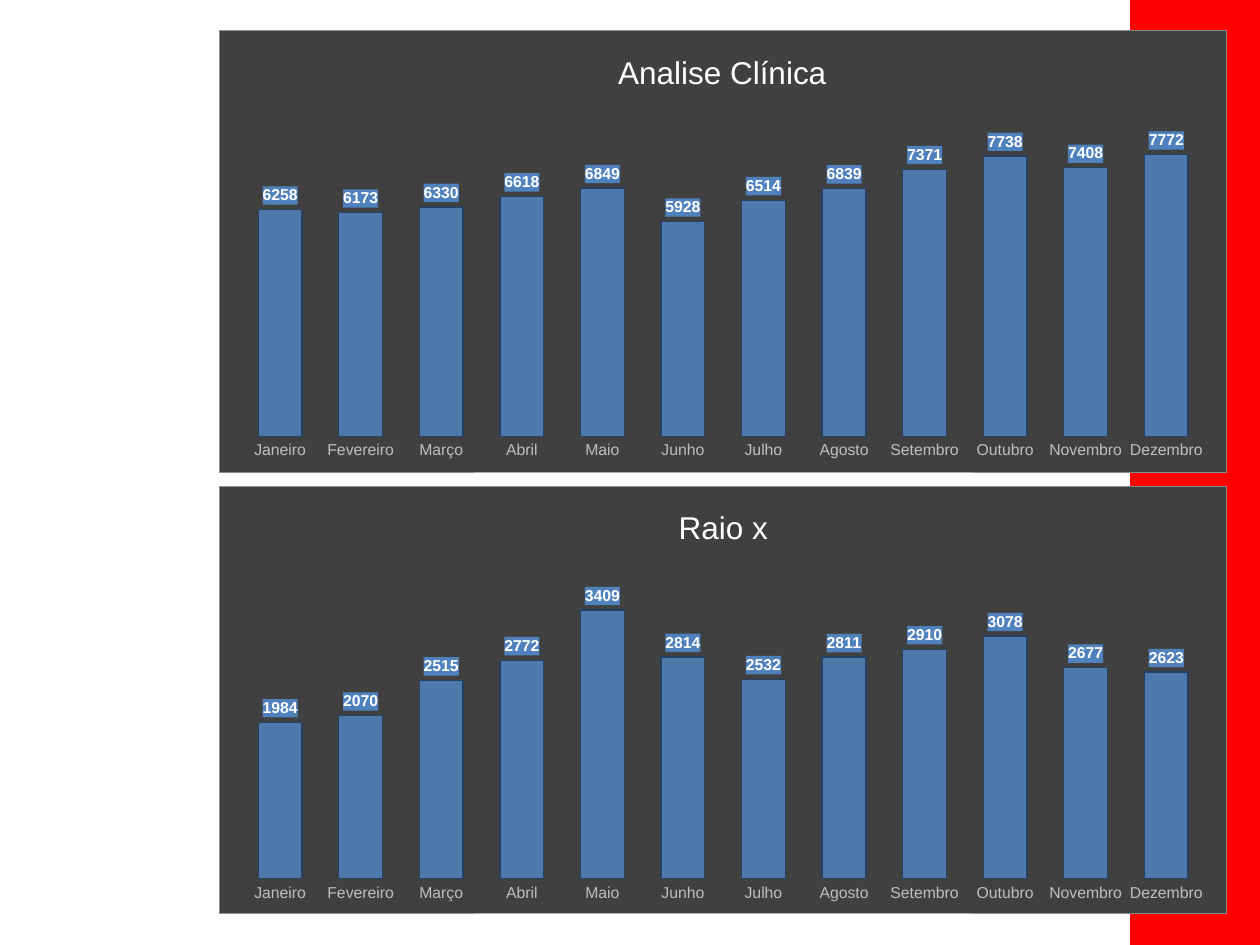
"""Build a slide with two monthly column charts beside a red band."""
from dataclasses import dataclass

from lxml import etree
from pptx import Presentation
from pptx import util as u
from pptx.chart.data import CategoryChartData
from pptx.dml.color import RGBColor
from pptx.enum import chart as charts, shapes
from pptx.oxml import parse_xml
from pptx.oxml.ns import nsdecls, qn


@dataclass(frozen=True)
class Theme:
    font: str = "Arial"
    band: str = "FF0000"
    panel: str = "404040"
    border: str = "8C8C8C"
    column: str = "4F81BD"
    outline: str = "254061"
    months: str = "BFBFBF"
    light: str = "FFFFFF"
    base_size: int = 10
    title_size: int = 18
    small_size: int = 9
    column_alpha: int = 88


THEME = Theme()
WIDTH, HEIGHT = u.Inches(10), u.Inches(7.5)
MONTHS = ("Janeiro", "Fevereiro", "Março", "Abril", "Maio", "Junho", "Julho",
          "Agosto", "Setembro", "Outubro", "Novembro", "Dezembro")
CLINICAL = (6258, 6173, 6330, 6618, 6849, 5928, 6514, 6839, 7371, 7738, 7408, 7772)
XRAY = (1984, 2070, 2515, 2772, 3409, 2814, 2532, 2811, 2910, 3078, 2677, 2623)


def style_font(font, size, color, bold=False):
    """Apply the theme face with a size and colour."""
    font.name, font.size, font.bold = THEME.font, u.Pt(size), bold
    font.color.rgb = RGBColor.from_string(color)


def box_properties(fill, border=None):
    """Return chart shape properties with a fill and an optional border."""
    line = (f'<a:ln w="{u.Pt(0.5)}"><a:solidFill><a:srgbClr val="{border}"/>'
            '</a:solidFill></a:ln>') if border else ""
    return parse_xml(f'<c:spPr {nsdecls("c", "a")}><a:solidFill>'
                     f'<a:srgbClr val="{fill}"/></a:solidFill>{line}</c:spPr>')


def set_layout(parent, index, target=None, **shares):
    """Place a chart part at shares of the chart's size."""
    for old in parent.findall(qn("c:layout")):
        parent.remove(old)
    layout = etree.Element(qn("c:layout"))
    manual = etree.SubElement(layout, qn("c:manualLayout"))
    settings = {"layoutTarget": target} if target else {}
    settings.update(xMode="edge", yMode="edge", **shares)
    for name, value in settings.items():
        etree.SubElement(manual, qn(f"c:{name}")).set("val", str(value))
    parent.insert(index, layout)


def add_band(page):
    """Add the red band on the right edge."""
    band = page.shapes.add_shape(shapes.MSO_SHAPE.RECTANGLE, u.Inches(8.98), 0,
                                 u.Inches(1.25), HEIGHT)
    band.shadow.inherit = False
    band.fill.solid()
    band.fill.fore_color.rgb = RGBColor.from_string(THEME.band)
    band.line.color.rgb = RGBColor.from_string(THEME.band)
    band.line.width = u.Pt(2)


def style_title(chart, title, left):
    """Write the chart title and place it."""
    chart.has_title = True
    para = chart.chart_title.text_frame.paragraphs[0]
    para.text = title
    style_font(para.font, THEME.title_size, THEME.light)
    set_layout(chart.chart_title._element, 1, x=left, y=0.035)


def style_axes(chart, top):
    """Show month names only and fix the value range."""
    months, values = chart.category_axis, chart.value_axis
    months.major_tick_mark = months.minor_tick_mark = charts.XL_TICK_MARK.NONE
    months.format.line.fill.background()
    style_font(months.tick_labels.font, THEME.small_size, THEME.months)
    values.minimum_scale, values.maximum_scale = 0, top
    values.has_major_gridlines = False
    values.visible = False


def style_columns(plot):
    """Colour the columns and their value labels."""
    plot.gap_width = 84
    plot.vary_by_categories = False
    series = plot.series[0]
    look = series.format
    look.fill.solid()
    look.fill.fore_color.rgb = RGBColor.from_string(THEME.column)
    color = series._element.find(".//" + qn("a:srgbClr"))
    etree.SubElement(color, qn("a:alpha")).set("val", str(THEME.column_alpha * 1000))
    look.line.color.rgb = RGBColor.from_string(THEME.outline)
    look.line.width = u.Pt(0.75)
    labels = series.data_labels
    labels.show_value = True
    labels.position = charts.XL_LABEL_POSITION.OUTSIDE_END
    style_font(labels.font, THEME.small_size, THEME.light, bold=True)
    labels._element.find(qn("c:txPr")).addprevious(box_properties(THEME.column))


def add_month_chart(page, title, values, top, height, limit, title_left, plot_top, plot_height):
    """Add one dark panel with a column for each month."""
    data = CategoryChartData()
    data.categories = MONTHS
    data.add_series(title, values)
    chart = page.shapes.add_chart(
        charts.XL_CHART_TYPE.COLUMN_CLUSTERED, u.Inches(1.74), u.Inches(top),
        u.Inches(8), u.Inches(height), data).chart
    style_font(chart.font, THEME.base_size, "000000")
    chart.has_legend = False
    style_title(chart, title, title_left)
    style_axes(chart, limit)
    style_columns(chart.plots[0])
    body = chart._chartSpace.find(qn("c:chart"))
    body.addnext(box_properties(THEME.panel, THEME.border))
    set_layout(body.find(qn("c:plotArea")), 0, "inner",
               x=0.02, y=plot_top, w=0.96, h=plot_height)


def main():
    """Build and save the deck."""
    deck = Presentation()
    deck.slide_width, deck.slide_height = WIDTH, HEIGHT
    page = deck.slides.add_slide(deck.slide_layouts[6])
    add_band(page)
    add_month_chart(page, "Analise Clínica", CLINICAL, 0.24, 3.51, 9000, 0.39, 0.18, 0.74)
    add_month_chart(page, "Raio x", XRAY, 3.86, 3.39, 4000, 0.45, 0.18, 0.74)
    deck.save("out.pptx")


if __name__ == "__main__":
    main()
